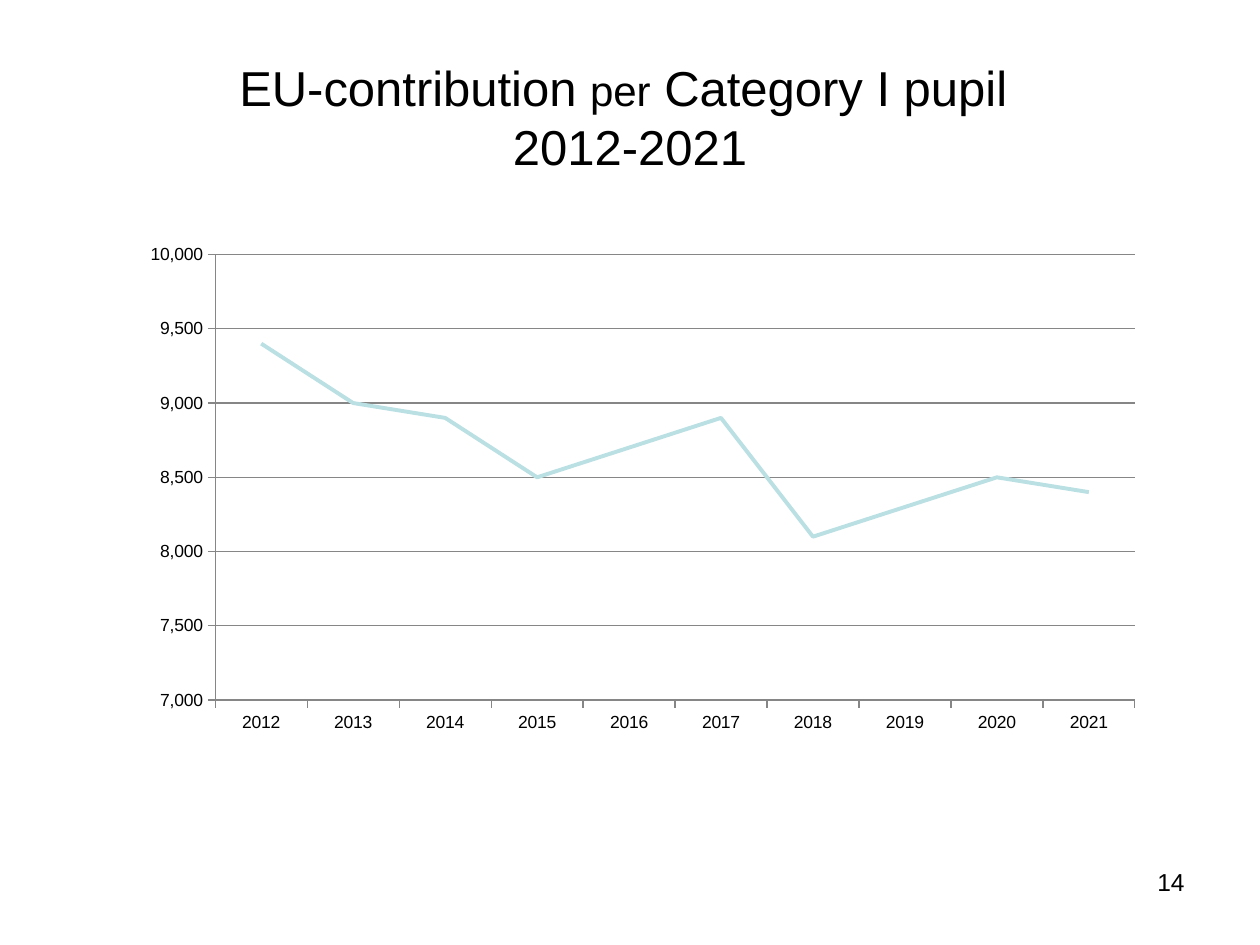
from dataclasses import dataclass

from lxml import etree
from pptx import Presentation
from pptx.chart.data import CategoryChartData
from pptx.dml.color import RGBColor
from pptx.enum.chart import XL_CHART_TYPE, XL_MARKER_STYLE, XL_TICK_MARK
from pptx.enum.text import MSO_ANCHOR, PP_ALIGN
from pptx.oxml.ns import qn
from pptx.util import Inches, Pt

LINE = XL_CHART_TYPE.LINE
NO_MARKER = XL_MARKER_STYLE.NONE
OUTSIDE = XL_TICK_MARK.OUTSIDE
TOP, MIDDLE = MSO_ANCHOR.TOP, MSO_ANCHOR.MIDDLE
CENTER, RIGHT = PP_ALIGN.CENTER, PP_ALIGN.RIGHT
FONT = "Arial"
BLACK, GREY, AQUA = "000000", "868686", "BBE0E3"
CONTRIBUTIONS = [9400, 9000, 8900, 8500, 8700, 8900, 8100, 8300, 8500, 8400]


@dataclass
class Run:
    text: str
    size: float
    break_before: bool = False


@dataclass
class TextBlock:
    left: float
    top: float
    width: float
    height: float
    anchor: MSO_ANCHOR
    align: PP_ALIGN
    runs: list[Run]


TEXTS = [
    TextBlock(0.5, 0.3, 9, 1.25, MIDDLE, CENTER, [
        Run("EU-contribution ", 28),
        Run("per", 24),
        Run(" Category I pupil ", 28),
        Run("2012-2021", 28, True),
    ]),
    TextBlock(7.17, 6.83, 2.33, 0.52, TOP, RIGHT, [Run("14", 14)]),
]


def color(value: str) -> RGBColor:
    return RGBColor.from_string(value)


def style_font(font, size: float) -> None:
    font.name = FONT
    font.size = Pt(size)
    font.color.rgb = color(BLACK)


def style_line(line, value: str, width: float) -> None:
    line.color.rgb = color(value)
    line.width = Pt(width)


def add_text(s, block: TextBlock) -> None:
    sp = s.shapes.add_textbox(Inches(block.left), Inches(block.top),
                              Inches(block.width), Inches(block.height))
    tf = sp.text_frame
    tf.word_wrap = True
    tf.vertical_anchor = block.anchor
    p = tf.paragraphs[0]
    p.alignment = block.align
    for run in block.runs:
        if run.break_before:
            p.add_line_break()
        r = p.add_run()
        r.text = run.text
        style_font(r.font, run.size)


def set_plot_layout(chart, x: float, y: float, w: float, h: float) -> None:
    plot_area = chart.plots[0]._element.getparent()
    for old in plot_area.findall(qn("c:layout")):
        plot_area.remove(old)
    layout = etree.Element(qn("c:layout"))
    plot_area.insert(0, layout)
    manual = etree.SubElement(layout, qn("c:manualLayout"))
    settings = {"layoutTarget": "inner", "xMode": "edge", "yMode": "edge",
                "x": x, "y": y, "w": w, "h": h}
    for name, value in settings.items():
        etree.SubElement(manual, qn(f"c:{name}")).set("val", str(value))


def add_contribution_chart(s) -> None:
    data = CategoryChartData(number_format="#,##0")
    data.categories = [str(year) for year in range(2012, 2022)]
    data.add_series("Series 1", CONTRIBUTIONS)
    chart = s.shapes.add_chart(LINE, Inches(1.06), Inches(1.86),
                               Inches(8.11), Inches(4.02), data).chart
    chart.has_title = False
    chart.has_legend = False
    style_font(chart.font, 10)
    set_plot_layout(chart, 0.08, 0.04, 0.9, 0.88)

    for axis in (chart.category_axis, chart.value_axis):
        axis.major_tick_mark = OUTSIDE
        style_line(axis.format.line, GREY, 0.75)
        style_font(axis.tick_labels.font, 10)
    axis = chart.value_axis
    axis.minimum_scale, axis.maximum_scale, axis.major_unit = 7000, 10000, 500
    axis.has_major_gridlines = True
    style_line(axis.major_gridlines.format.line, GREY, 0.75)
    axis.tick_labels.number_format = "#,##0"
    axis.tick_labels.number_format_is_linked = False

    plot = chart.plots[0]
    plot.vary_by_categories = False
    series = plot.series[0]
    series.smooth = False
    series.marker.style = NO_MARKER
    style_line(series.format.line, AQUA, 2.25)


def main() -> None:
    prs = Presentation()
    prs.slide_width, prs.slide_height = Inches(10), Inches(7.5)
    s = prs.slides.add_slide(prs.slide_layouts[6])
    for block in TEXTS:
        add_text(s, block)
    add_contribution_chart(s)
    prs.save("out.pptx")


if __name__ == "__main__":
    main()
